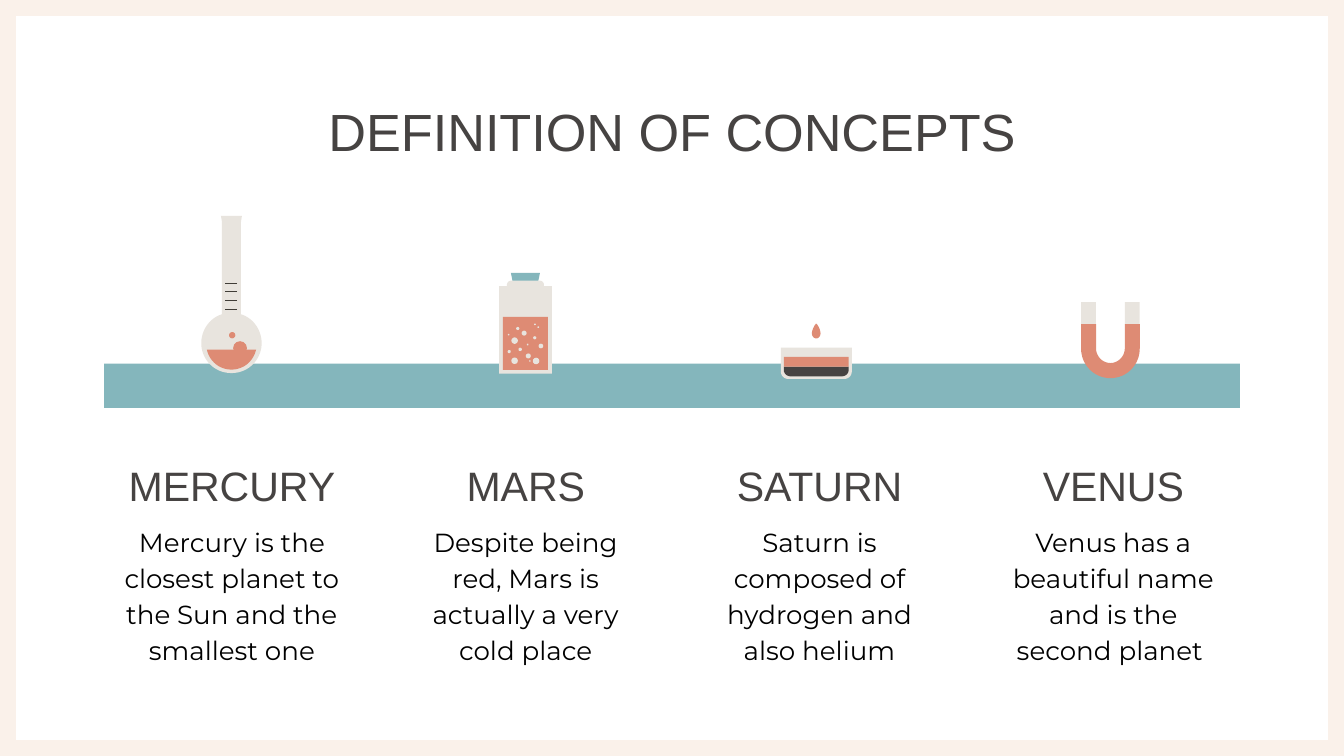
"""Builds the "Definition of concepts" slide with four illustrated planets."""
import lxml.etree
import pptx
import pptx.dml.color
import pptx.enum.shapes
import pptx.enum.text
import pptx.oxml.ns
import pptx.util

Pt = pptx.util.Pt
RGB = pptx.dml.color.RGBColor
SHAPE = pptx.enum.shapes.MSO_SHAPE
ANCHOR = pptx.enum.text.MSO_ANCHOR

CREAM = RGB(0xFA, 0xF1, 0xEA)
WHITE = RGB(0xFF, 0xFF, 0xFF)
BLACK = RGB(0, 0, 0)
CHARCOAL = RGB(0x46, 0x43, 0x42)
TICK = RGB(0x40, 0x3D, 0x37)
TEAL = RGB(0x84, 0xB6, 0xBC)
GLASS = RGB(0xE8, 0xE4, 0xDE)
CORAL = RGB(0xDE, 0x8B, 0x74)

CURVE_STEPS = 16
COLUMN_LEFT, COLUMN_STEP, COLUMN_WIDTH = 56.2, 157.4, 136.1
CONCEPTS = [
    ("MERCURY", "Mercury is the closest planet to the Sun and the smallest one"),
    ("MARS", "Despite being red, Mars is actually a very cold place"),
    ("SATURN", "Saturn is composed of hydrogen and also helium"),
    ("VENUS", "Venus has a beautiful name and is the second planet "),
]
JAR_BUBBLES = [
    (283, 190.7, 1.35), (287.2, 193.4, 1.75), (278.7, 187.2, 0.9),
    (282.7, 184.6, 0.45), (280.8, 178.5, 1.35), (275.7, 182.5, 1.75),
    (277.4, 176, 0.85), (288.4, 175.3, 0.45), (289.8, 185.4, 1.25),
    (272.8, 188.4, 0.85), (275.7, 193.3, 1.75), (272.5, 179.3, 0.45),
    (283.9, 193.4, 0.4), (286.5, 181, 0.85), (286.6, 173.8, 0.45),
]


def paint(sp, color):
    """Give a shape a flat fill without line or shadow."""
    sp.shadow.inherit = False
    sp.fill.solid()
    sp.fill.fore_color.rgb = color
    sp.line.fill.background()


def add_rect(shapes, color, left, top, width, height):
    """Add a plain rectangle."""
    box = (Pt(v) for v in (left, top, width, height))
    paint(shapes.add_shape(SHAPE.RECTANGLE, *box), color)


def add_circle(shapes, color, x, y, radius):
    """Add a circle by its centre."""
    box = (Pt(v) for v in (x - radius, y - radius, 2 * radius, 2 * radius))
    paint(shapes.add_shape(SHAPE.OVAL, *box), color)


def curve_points(start, c1x, c1y, c2x, c2y, x, y):
    """Return points along a cubic curve, without its start."""
    points = []
    for i in range(1, CURVE_STEPS + 1):
        t = i / CURVE_STEPS
        weights = ((1 - t) ** 3, 3 * t * (1 - t) ** 2, 3 * t * t * (1 - t), t ** 3)
        points.append(tuple(
            sum(w * v for w, v in zip(weights, axis))
            for axis in ((start[0], c1x, c2x, x), (start[1], c1y, c2y, y))))
    return points


def add_symmetric(shapes, color, axis, start, *segments):
    """Add an outline from one half, given as distances from its vertical axis."""
    half = [start]
    for seg in segments:
        half += [seg] if len(seg) == 2 else curve_points(half[-1], *seg)
    points = [(Pt(axis - d), Pt(y)) for d, y in half]
    points += [(Pt(axis + d), Pt(y)) for d, y in reversed(half)]
    builder = shapes.build_freeform(*points[0], scale=1.0)
    builder.add_line_segments(points[1:], close=True)
    paint(builder.convert_to_shape(), color)


def add_tick(shapes, left, right, y):
    """Add a thin horizontal scale mark."""
    kind = pptx.enum.shapes.MSO_CONNECTOR.STRAIGHT
    line = shapes.add_connector(kind, Pt(right), Pt(y), Pt(left), Pt(y))
    line.line.color.rgb = TICK
    line.line.width = Pt(0.54)
    effects = pptx.oxml.ns.qn("a:effectLst")
    lxml.etree.SubElement(line._element.spPr, effects)


def add_text(shapes, text, box, size, font, color, anchor=ANCHOR.TOP,
             spacing=1.15, top_inset=7.2):
    """Add a centred text box with one run."""
    tf = shapes.add_textbox(*(Pt(v) for v in box)).text_frame
    tf.word_wrap = True
    tf.vertical_anchor = anchor
    tf.margin_left = tf.margin_right = tf.margin_bottom = Pt(7.2)
    tf.margin_top = Pt(top_inset)
    p = tf.paragraphs[0]
    p.alignment = pptx.enum.text.PP_ALIGN.CENTER
    p.line_spacing = spacing
    r = p.add_run()
    r.text = text
    r.font.size = Pt(size)
    r.font.name = font
    r.font.color.rgb = color


def add_concept(shapes, left, name, definition):
    """Add a concept's definition and heading."""
    add_text(shapes, definition, (left, 272.2, COLUMN_WIDTH, 93.6), 14,
             "Montserrat", BLACK)
    add_text(shapes, name, (left, 234.7, COLUMN_WIDTH, 45.4), 22,
             "Arial", CHARCOAL, ANCHOR.BOTTOM)


def add_flask(shapes):
    """Add the round flask with its scale."""
    axis = 124
    add_symmetric(shapes, GLASS, axis, (5.6, 115.7), (5.1, 118.8), (5.1, 168.4),
                  (12.4, 170.6, 17.2, 178.4, 16, 186.4),
                  (14.6, 194.4, 8, 199.9, 0, 199.9))
    for i in range(4):
        add_tick(shapes, 120.5, 127, 151.7 + 4.65 * i)
    add_symmetric(shapes, CORAL, axis, (13.2, 187.3),
                  (11.7, 193.7, 6.4, 198, 0, 198))
    add_circle(shapes, CORAL, 128.6, 186.5, 3.7)
    add_circle(shapes, CORAL, 124.4, 179.6, 1.7)


def add_jar(shapes):
    """Add the stoppered jar of bubbling liquid."""
    axis = 281.5
    add_symmetric(shapes, TEAL, axis, (7.8, 146.2), (6.9, 150.5))
    add_symmetric(shapes, GLASS, axis, (7.8, 150.4),
                  (8.9, 150.4, 9.9, 151.4, 9.9, 152.6),
                  (9.9, 153.3), (14.1, 153.3), (14.1, 200.1))
    add_rect(shapes, CORAL, 269.5, 169.8, 24.1, 28.4)
    for bubble in JAR_BUBBLES:
        add_circle(shapes, GLASS, *bubble)


def add_dish(shapes):
    """Add the dish with a falling drop."""
    axis = 437.3
    add_symmetric(shapes, CORAL, axis, (0, 173.4),
                  (0.4, 173.4, 2.3, 176.4, 2.3, 178.6),
                  (2.3, 180.2, 1.2, 181.3, 0, 181.3))
    add_symmetric(shapes, GLASS, axis, (19, 186.2), (19, 199),
                  (19, 201.3, 17.2, 203, 15, 203))
    add_symmetric(shapes, CHARCOAL, axis, (17.4, 196.4), (17.4, 198),
                  (17.4, 200, 15.8, 201.6, 13.8, 201.6))
    add_rect(shapes, CORAL, 419.9, 191.2, 34.8, 5.2)


def add_magnet(shapes):
    """Add the grouped horseshoe magnet."""
    parts = shapes.add_group_shape().shapes
    for left in (579.2, 602.6):
        add_rect(parts, GLASS, left, 161.8, 8, 12)
    add_symmetric(parts, CORAL, 594.9, (0, 194.5),
                  (4.2, 194.5, 7.7, 190.9, 7.7, 186.6), (7.7, 173.7),
                  (15.7, 173.7), (15.7, 186.8),
                  (15.7, 195.5, 8.7, 202.6, 0, 202.6))


def main():
    """Build and save the slide."""
    prs = pptx.Presentation()
    prs.slide_width, prs.slide_height = Pt(720), Pt(405)
    s = prs.slides.add_slide(prs.slide_layouts[6])
    s.background.fill.solid()
    s.background.fill.fore_color.rgb = CREAM
    shapes = s.shapes
    add_rect(shapes, WHITE, 8.6, 8.6, 702.8, 387.8)
    add_text(shapes, "DEFINITION OF CONCEPTS", (55.8, 42.5, 608.4, 45.4), 28,
             "Arial", CHARCOAL, spacing=1.0, top_inset=10.7)
    for i, (name, definition) in enumerate(CONCEPTS):
        add_concept(shapes, COLUMN_LEFT + i * COLUMN_STEP, name, definition)
    add_rect(shapes, TEAL, 55.8, 194.8, 608.4, 23.8)
    for add_icon in (add_flask, add_jar, add_dish, add_magnet):
        add_icon(shapes)
    prs.save("out.pptx")


if __name__ == "__main__":
    main()
